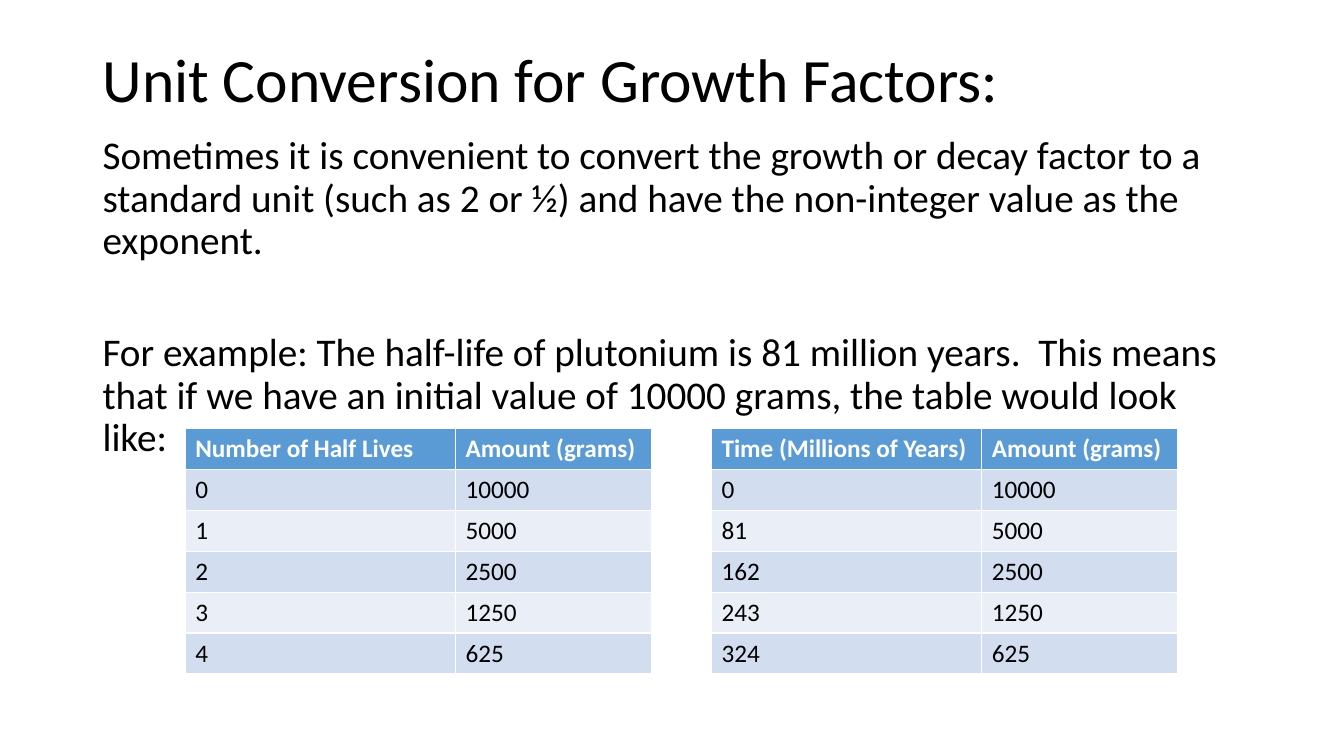
"""Build a slide on unit conversion for growth factors, with two half-life tables."""
from dataclasses import dataclass

from lxml import etree
from pptx import Presentation
from pptx.dml.color import RGBColor
from pptx.enum.text import MSO_ANCHOR, MSO_AUTO_SIZE, PP_ALIGN
from pptx.oxml.ns import qn
from pptx.util import Cm, Pt

LEFT = PP_ALIGN.LEFT
TOP, MIDDLE = MSO_ANCHOR.TOP, MSO_ANCHOR.MIDDLE
NO_FIT = MSO_AUTO_SIZE.NONE
BLACK = RGBColor(0x00, 0x00, 0x00)
WHITE = RGBColor(0xFF, 0xFF, 0xFF)
BLUE = RGBColor(0x5B, 0x9B, 0xD5)
BANDS = (RGBColor(0xEA, 0xEF, 0xF7), RGBColor(0xD2, 0xDE, 0xEF))
FONT = "Calibri"
WIDTHS = (6.81, 4.93)
ROW = 1.03
GRID_TOP = 10.8
AMOUNTS = (10000, 5000, 2500, 1250, 625)


@dataclass(frozen=True)
class Block:
    """A paragraph with its size and the space before it, in points."""
    text: str
    size: int
    before: int = 0


@dataclass(frozen=True)
class Grid:
    """A table of amounts against one counted unit."""
    left: float
    head: str
    step: int


TITLE = (Block("Unit Conversion for Growth Factors:", 44),)
BODY = (
    Block("Sometimes it is convenient to convert the growth or decay factor to a "
          "standard unit (such as 2 or ½) and have the non-integer value as the "
          "exponent.", 28, 10),
    Block("For example: The half-life of plutonium is 81 million years.  This means "
          "that if we have an initial value of 10000 grams, the table would look "
          "like:", 28, 50),
)
GRIDS = (
    Grid(17.93, "Time (Millions of Years)", 81),
    Grid(4.67, "Number of Half Lives", 1),
)


def add_run(para, text: str, size: int, color: RGBColor, bold: bool = False) -> None:
    """Add one formatted run to a paragraph."""
    run = para.add_run()
    run.text = text
    font = run.font
    font.name, font.size, font.bold = FONT, Pt(size), bold
    font.color.rgb = color


def fill_holder(holder, top: float, height: float, anchor, blocks: tuple[Block, ...]) -> None:
    """Place a placeholder and write its paragraphs without bullets."""
    holder.left, holder.top = Cm(2.33), Cm(top)
    holder.width, holder.height = Cm(29.21), Cm(height)
    frame = holder.text_frame
    frame.word_wrap, frame.auto_size = True, NO_FIT
    frame.vertical_anchor = anchor
    for i, block in enumerate(blocks):
        para = frame.add_paragraph() if i else frame.paragraphs[0]
        para.alignment, para.line_spacing = LEFT, 0.9
        para.space_before = Pt(block.before)
        props = para._p.get_or_add_pPr()
        props.set("marL", "0")
        props.set("indent", "0")
        etree.SubElement(props, qn("a:buNone"))
        add_run(para, block.text, block.size, BLACK)


def add_grid(slide, grid: Grid) -> None:
    """Draw one table with a header and banded rows."""
    rows = [(grid.head, "Amount (grams)")]
    rows += [(str(i * grid.step), str(amount)) for i, amount in enumerate(AMOUNTS)]
    frame = slide.shapes.add_table(len(rows), len(WIDTHS), Cm(grid.left), Cm(GRID_TOP),
                                   Cm(sum(WIDTHS)), Cm(ROW * len(rows)))
    table = frame.table
    for col, width in zip(table.columns, WIDTHS):
        col.width = Cm(width)
    for i, row in enumerate(rows):
        table.rows[i].height = Cm(ROW)
        head = i == 0
        for j, text in enumerate(row):
            cell = table.cell(i, j)
            cell.fill.solid()
            cell.fill.fore_color.rgb = BLUE if head else BANDS[i % 2]
            add_run(cell.text_frame.paragraphs[0], text, 18, WHITE if head else BLACK, head)


def main() -> None:
    """Build and save the slide."""
    deck = Presentation()
    deck.slide_width, deck.slide_height = Cm(33.87), Cm(19.05)
    slide = deck.slides.add_slide(deck.slide_layouts[1])
    fill_holder(slide.shapes.title, 1.02, 2.11, MIDDLE, TITLE)
    fill_holder(slide.placeholders[1], 3.3, 13.87, TOP, BODY)
    for grid in GRIDS:
        add_grid(slide, grid)
    deck.save("out.pptx")


if __name__ == "__main__":
    main()
